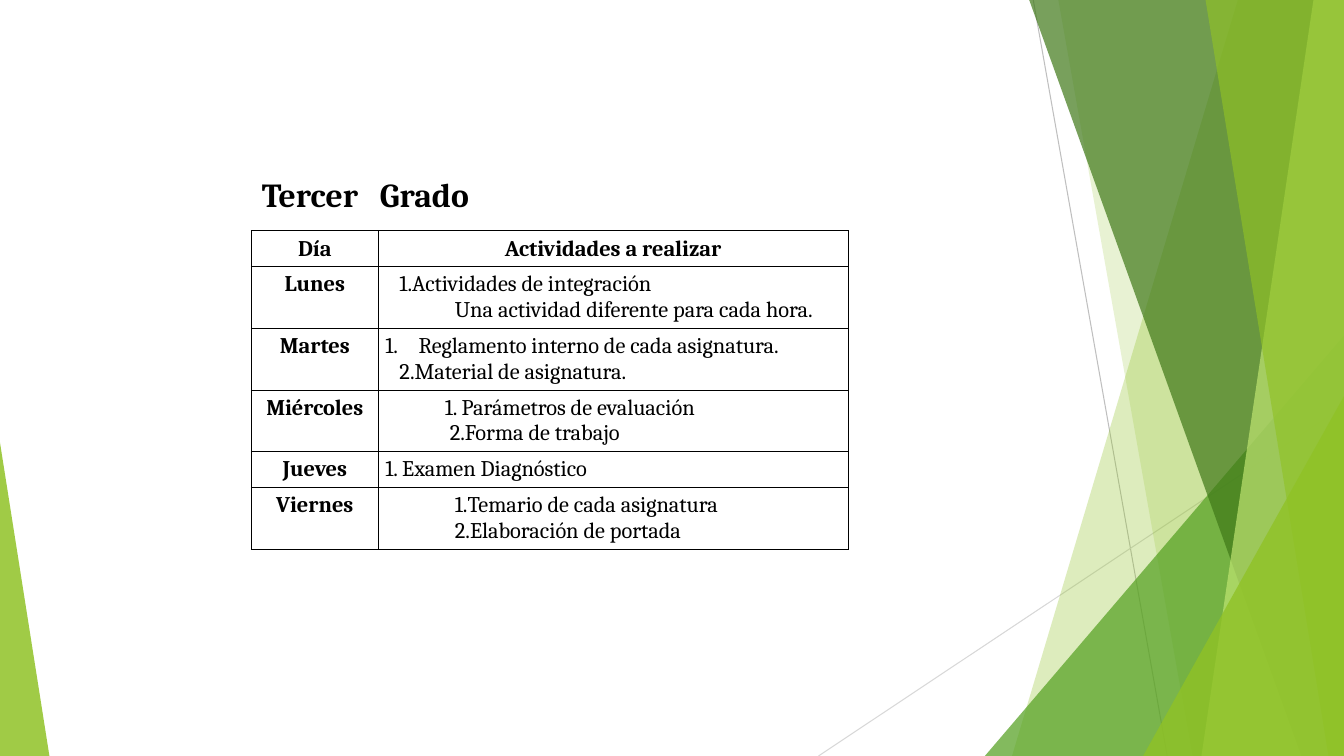
from dataclasses import dataclass

from pptx import Presentation
from pptx.dml.color import RGBColor
from pptx.enum.shapes import MSO_CONNECTOR, MSO_SHAPE
from pptx.enum.text import MSO_ANCHOR, PP_ALIGN
from pptx.oxml.ns import qn
from pptx.util import Inches, Pt
from lxml import etree

STRAIGHT = MSO_CONNECTOR.STRAIGHT
TRIANGLE = MSO_SHAPE.ISOSCELES_TRIANGLE
MIDDLE = MSO_ANCHOR.MIDDLE
LEFT, CENTER = PP_ALIGN.LEFT, PP_ALIGN.CENTER
WIDTH, HEIGHT = Inches(13.333), Inches(7.5)


@dataclass(frozen=True)
class Theme:
    font: str = "Cambria"
    ink: str = "000000"
    lime: str = "90C226"
    pale: str = "BFE471"
    green: str = "54A021"
    dark: str = "3F7818"
    ray: str = "BFBFBF"
    soft_ray: str = "D8D8D8"
    title_size: int = 24
    body_size: int = 16
    rule: float = 0.75


THEME = Theme()

RAYS = [
    ((76.88, 0), (86.85, 100), THEME.ray),
    ((100, 53.73), (60.9, 100), THEME.soft_ray),
]
BACK_BANDS = [(92.1, 75.3, THEME.lime, 30), (78.75, 88.73, THEME.lime, 20)]
FRONT_BANDS = [
    (76.58, 96.83, THEME.dark, 70),
    (97.73, 89.4, THEME.pale, 70),
    (89.7, 98.85, THEME.lime, 65),
]
BACK_PEAK = (73.28, 44.4, 26.72, 1, THEME.green, 72)
FRONT_PEAKS = [
    (85.05, 52.4, 14.95, 1, THEME.lime, 80),
    (0, 58.53, 3.68, 0, THEME.lime, 85),
]

COLUMNS = (9.45, 34.95)
ROW_BASE, ROW_LINE = 1.26, 3.45
HEADER = ("Día", "Actividades a realizar")
PLAN = [
    ("Lunes", [
        ("Actividades de integración", {"margin": 0.25, "hang": 0.11, "number": 1}),
        ("Una actividad diferente para cada hora.", {"margin": 0.69}),
    ]),
    ("Martes", [
        ("1.\tReglamento interno de cada asignatura.", {"margin": 0.33, "hang": 0.33}),
        ("Material de asignatura.", {"margin": 0.25, "hang": 0.11, "number": 2}),
    ]),
    ("Miércoles", [
        ("1. Parámetros de evaluación", {"margin": 0.59}),
        ("2.Forma de trabajo", {"margin": 0.64}),
    ]),
    ("Jueves", [("1. Examen Diagnóstico", {})]),
    ("Viernes", [
        ("1.Temario de cada asignatura", {"margin": 0.69}),
        ("2.Elaboración de portada", {"margin": 0.69}),
    ]),
]


def across(share):
    return round(WIDTH * share / 100)


def down(share):
    return round(HEIGHT * share / 100)


def assign(obj, values):
    for name, value in values.items():
        setattr(obj, name, value)


def paint(sp, color, opacity):
    sp.shadow.inherit = False
    sp.line.fill.background()
    sp.fill.solid()
    sp.fill.fore_color.rgb = RGBColor.from_string(color)
    clr = sp.fill._xPr.find(qn("a:solidFill"))[0]
    etree.SubElement(clr, qn("a:alpha"), val=str(opacity * 1000))


def add_ray(s, start, end, color):
    ray = s.shapes.add_connector(
        STRAIGHT, across(start[0]), down(start[1]), across(end[0]), down(end[1]))
    ray.line.color.rgb = RGBColor.from_string(color)
    ray.line.width = Pt(THEME.rule)
    etree.SubElement(ray._element.spPr, qn("a:effectLst"))


def add_band(s, top, bottom, color, opacity):
    outline = s.shapes.build_freeform(across(top), 0)
    outline.add_line_segments(
        [(WIDTH, 0), (WIDTH, HEIGHT), (across(bottom), HEIGHT)], close=True)
    paint(outline.convert_to_shape(), color, opacity)


def add_peak(s, left, top, width, apex, color, opacity):
    sp = s.shapes.add_shape(
        TRIANGLE, across(left), down(top), across(width), down(100 - top))
    sp.adjustments[0] = apex
    paint(sp, color, opacity)


def write(p, text, size, bold=False, align=LEFT, margin=0, hang=0, number=None):
    p.alignment = align
    r = p.add_run()
    r.text = text
    assign(r.font, {"name": THEME.font, "size": Pt(size), "bold": bold})
    r.font.color.rgb = RGBColor.from_string(THEME.ink)
    pPr = p._p.get_or_add_pPr()
    pPr.set("marL", str(Inches(margin)))
    pPr.set("indent", str(-Inches(hang)))
    if number:
        etree.SubElement(
            pPr, qn("a:buAutoNum"), type="arabicPeriod", startAt=str(number))


def add_title(s):
    box = s.shapes.add_textbox(across(18.75), down(22.67), across(17.85), down(6))
    tf = box.text_frame
    assign(tf, {"word_wrap": True, "vertical_anchor": MIDDLE,
                "margin_top": 0, "margin_bottom": 0})
    write(tf.paragraphs[0], "Tercer\tGrado", THEME.title_size,
          bold=True, margin=1.17, hang=1.17)


def draw_borders(cell):
    tcPr = cell._tc.get_or_add_tcPr()
    for i, side in enumerate(("lnL", "lnR", "lnT", "lnB")):
        ln = etree.Element(qn(f"a:{side}"), w=str(Pt(THEME.rule)))
        fill = etree.SubElement(ln, qn("a:solidFill"))
        etree.SubElement(fill, qn("a:srgbClr"), val=THEME.ink)
        tcPr.insert(i, ln)


def fill_cell(cell, lines):
    cell.fill.background()
    assign(cell, {"margin_left": Inches(0.07), "margin_right": Inches(0.07),
                  "margin_top": Inches(0.05), "margin_bottom": Inches(0.05)})
    tf = cell.text_frame
    for i, (text, layout) in enumerate(lines):
        p = tf.add_paragraph() if i else tf.paragraphs[0]
        write(p, text, THEME.body_size, **layout)
    draw_borders(cell)


def add_plan(s):
    heading = {"bold": True, "align": CENTER}
    rows = [[[(text, heading)] for text in HEADER]]
    rows += [[[(day, heading)], tasks] for day, tasks in PLAN]
    heights = [ROW_BASE + ROW_LINE * len(tasks) for _, tasks in rows]
    table = s.shapes.add_table(
        len(rows), len(COLUMNS), across(18.7), down(30.53),
        across(sum(COLUMNS)), down(sum(heights))).table
    assign(table, {"first_row": False, "horz_banding": False})
    for column, width in zip(table.columns, COLUMNS):
        column.width = across(width)
    for row, height, contents in zip(table.rows, heights, rows):
        row.height = down(height)
        for cell, lines in zip(row.cells, contents):
            fill_cell(cell, lines)


def main():
    prs = Presentation()
    assign(prs, {"slide_width": WIDTH, "slide_height": HEIGHT})
    s = prs.slides.add_slide(prs.slide_layouts[6])
    for ray in RAYS:
        add_ray(s, *ray)
    for band in BACK_BANDS:
        add_band(s, *band)
    add_peak(s, *BACK_PEAK)
    for band in FRONT_BANDS:
        add_band(s, *band)
    for peak in FRONT_PEAKS:
        add_peak(s, *peak)
    add_plan(s)
    add_title(s)
    prs.save("out.pptx")


if __name__ == "__main__":
    main()
